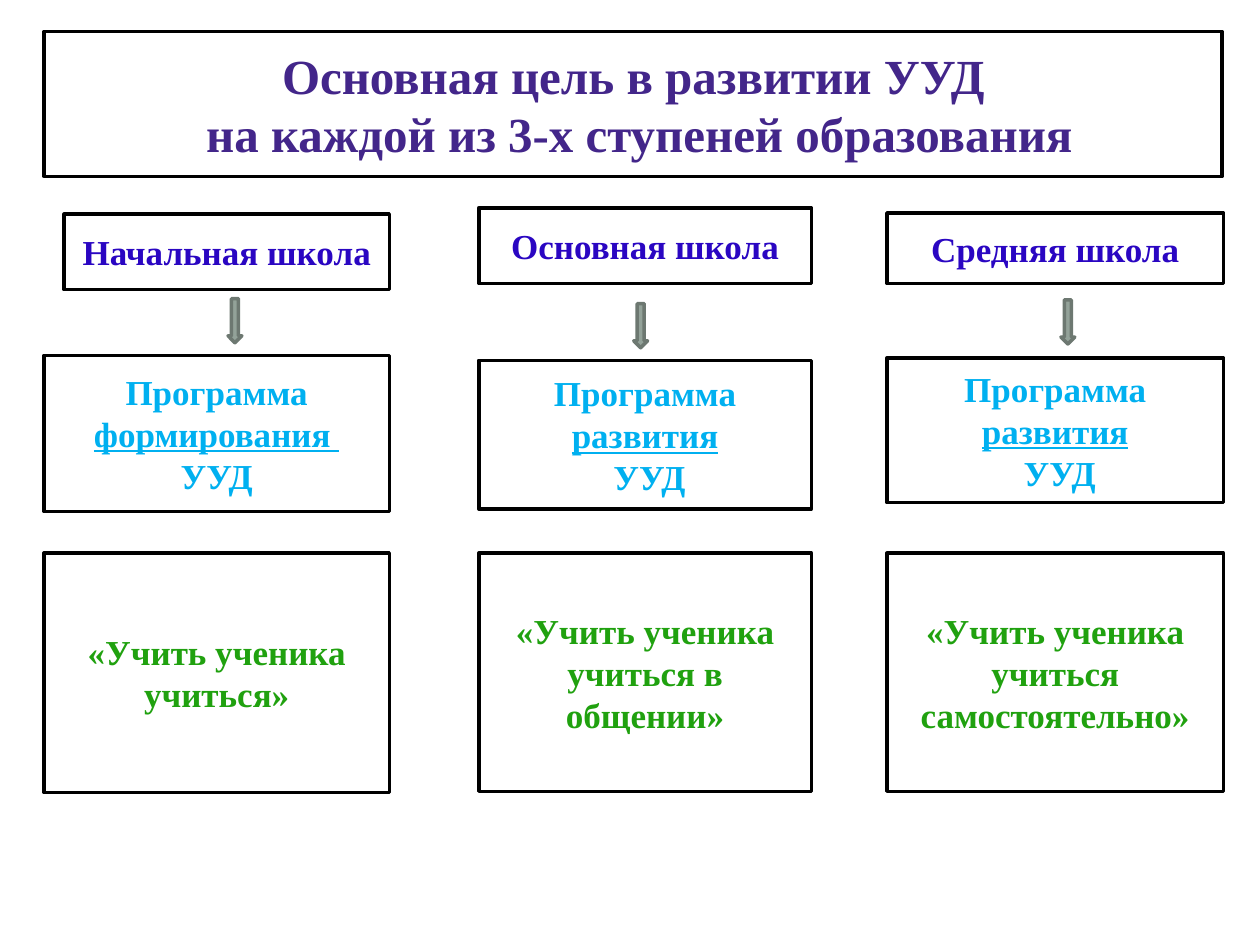
"""Build a slide on the goals of УУД development at three school stages."""
from dataclasses import dataclass

from pptx import Presentation
from pptx.dml.color import RGBColor
from pptx.enum.shapes import MSO_SHAPE
from pptx.enum.text import MSO_ANCHOR, MSO_AUTO_SIZE, PP_ALIGN
from pptx.util import Inches, Pt


@dataclass(frozen=True)
class Theme:
    font: str = "Times New Roman"
    title_size: int = 28
    body_size: int = 20
    line_width: int = 2
    paper: str = "FFFFFF"
    border: str = "000000"
    title: str = "43268A"
    school: str = "2A06C2"
    programme: str = "00B0F0"
    goal: str = "20A10F"
    arrow: str = "93A299"
    arrow_border: str = "6D7871"


def style_shape(shape, fill, border):
    shape.fill.solid()
    shape.fill.fore_color.rgb = RGBColor.from_string(fill)
    shape.line.color.rgb = RGBColor.from_string(border)
    shape.line.width = Pt(theme.line_width)


def write_text(box, paragraphs, size, color):
    frame = box.text_frame
    frame.word_wrap = True
    frame.auto_size = MSO_AUTO_SIZE.NONE
    frame.vertical_anchor = MSO_ANCHOR.MIDDLE
    for index, spans in enumerate(paragraphs):
        para = frame.add_paragraph() if index else frame.paragraphs[0]
        para.alignment = PP_ALIGN.CENTER
        para.font.name = theme.font
        para.font.size = Pt(size)
        para.font.bold = True
        para.font.color.rgb = RGBColor.from_string(color)
        for text, underlined in spans:
            span = para.add_run()
            span.text = text
            if underlined:
                span.font.underline = True


theme = Theme()
deck = Presentation()
deck.slide_width, deck.slide_height = Inches(10), Inches(7.5)
page = deck.slides.add_slide(deck.slide_layouts[5])

title = page.shapes.title
title.left, title.top, title.width, title.height = map(Inches, (0.35, 0.25, 9.35, 1.15))
style_shape(title, theme.paper, theme.border)
title_lines = ("Основная цель в развитии УУД", " на каждой из 3-х ступеней образования")
write_text(title, [[(line, False)] for line in title_lines], theme.title_size, theme.title)

columns = ((0.35, 2.74), (3.8, 2.64), (7.04, 2.67))
school_indents = (0.16, 0, 0)
row_colors = (theme.school, theme.programme, theme.goal)
row_spans = (
    ((1.7, 0.6), (2.82, 1.24), (4.39, 1.9)),
    ((1.65, 0.6), (2.86, 1.18), (4.39, 1.89)),
    ((1.69, 0.56), (2.84, 1.15), (4.39, 1.89)),
)
stages = (
    ("Начальная школа", "формирования ", "УУД", "«Учить ученика учиться»"),
    ("Основная школа", "развития", " УУД", "«Учить ученика учиться в общении»"),
    ("Средняя школа", "развития", " УУД", "«Учить ученика учиться самостоятельно»"),
)
arrows = ((1.81, 2.37), (5.03, 2.41), (8.42, 2.38))

for (left, width), indent, rows, stage, arrow_corner in zip(
    columns, school_indents, row_spans, stages, arrows
):
    school, verb, subject, goal = stage
    contents = (
        [[(school, False)]],
        [[("Программа ", False), (verb, True)], [(subject, False)]],
        [[(goal, False)]],
    )
    for (top, height), inset, paragraphs, color in zip(rows, (indent, 0, 0), contents, row_colors):
        box = page.shapes.add_shape(
            MSO_SHAPE.RECTANGLE, *map(Inches, (left + inset, top, width - inset, height))
        )
        box.shadow.inherit = False
        style_shape(box, theme.paper, theme.border)
        write_text(box, paragraphs, theme.body_size, color)

    arrow = page.shapes.add_shape(MSO_SHAPE.DOWN_ARROW, *map(Inches, (*arrow_corner, 0.11, 0.35)))
    arrow.shadow.inherit = False
    style_shape(arrow, theme.arrow, theme.arrow_border)

deck.save("out.pptx")
